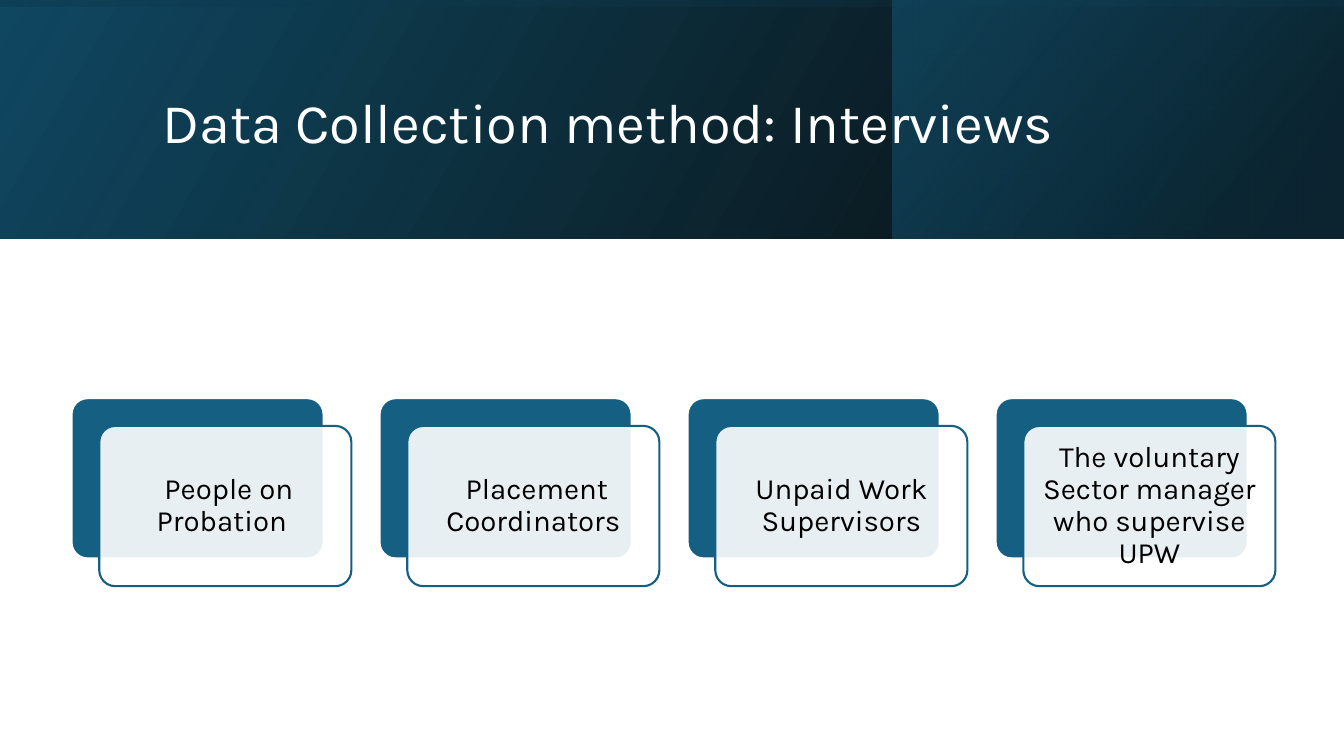
"""Build the interviews slide: a gradient header band and a row of four layered cards."""
from lxml.etree import SubElement
from pptx import Presentation
from pptx.dml.color import RGBColor as RGB
from pptx.enum.shapes import MSO_SHAPE as SHAPE
from pptx.enum.text import MSO_ANCHOR as ANCHOR, MSO_AUTO_SIZE as AUTO, PP_ALIGN as ALIGN
from pptx.oxml.ns import qn
from pptx.util import Inches, Pt

TITLE = "Data Collection method: Interviews"
GROUPS = [
    " People on Probation ",
    " Placement Coordinators",
    "Unpaid Work Supervisors",
    "The voluntary Sector manager who supervise UPW",
]

THEME = {
    "font": "Karla", "title_size": 40, "card_size": 21, "line": 1.5,
    "accent": "156082", "deep": "104862", "night": "0B3041",
    "black": "000000", "white": "FFFFFF",
}

W, H = 13.33, 7.5
BAND = 2.37
GLOW = 4.48
CARD_W, CARD_H, RADIUS = 2.5, 1.59, 0.1
LEFT, TOP, PITCH = 0.71, 3.95, 3.055
SHIFT = 0.275
INSET = 0.045

BANDS = [
    ((0, 0, W, BAND), 0, 330, [(0, "black", 96), (100, "deep", 100)]),
    ((W - GLOW, 0, GLOW, BAND), 0, 320, [(19, "night", 68), (100, "accent", 48)]),
    (((W - BAND) / 2, (BAND - W) / 2, BAND, W), 270, 350,
     [(23, "deep", 16), (99, "black", 45)]),
]


def colour(name):
    return RGB.from_string(THEME[name])


def set_opacity(sp, percents):
    for clr, percent in zip(sp._element.spPr.iter(qn("a:srgbClr")), percents):
        if percent < 100:
            SubElement(clr, qn("a:alpha")).set("val", str(percent * 1000))


def add_band(shapes, box, rotation, angle, stops):
    sp = shapes.add_shape(SHAPE.RECTANGLE, *map(Inches, box))
    sp.shadow.inherit = False
    sp.rotation = rotation
    sp._element.spPr.find(qn("a:xfrm")).set("flipH", "1")
    sp.fill.gradient()
    sp.fill.gradient_angle = 360 - angle
    for stop, (position, name, _) in zip(sp.fill.gradient_stops, stops):
        stop.position = position / 100
        stop.color.rgb = colour(name)
    set_opacity(sp, [opacity for _, _, opacity in stops])
    sp.line.fill.background()


def add_panel(shapes, x, y, fill, line, opacity):
    sp = shapes.add_shape(SHAPE.ROUNDED_RECTANGLE, *map(Inches, (x, y, CARD_W, CARD_H)))
    sp.adjustments[0] = RADIUS
    sp.shadow.inherit = False
    sp.fill.solid()
    sp.fill.fore_color.rgb = colour(fill)
    set_opacity(sp, [opacity])
    sp.line.color.rgb = colour(line)
    sp.line.width = Pt(THEME["line"])


def write(sp, text, size, name, align, margin):
    tf = sp.text_frame
    tf.text = text
    frame = {"word_wrap": True, "auto_size": AUTO.NONE, "vertical_anchor": ANCHOR.MIDDLE}
    frame.update({f"margin_{side}": Inches(margin) for side in ("left", "right", "top", "bottom")})
    p = tf.paragraphs[0]
    font = p.runs[0].font
    for target, formats in (
        (tf, frame),
        (p, {"alignment": align, "line_spacing": 0.9}),
        (font, {"name": THEME["font"], "size": Pt(THEME[size])}),
    ):
        for key, value in formats.items():
            setattr(target, key, value)
    font.color.rgb = colour(name)


def add_card(shapes, x, text):
    add_panel(shapes, x, TOP, "accent", "white", 100)
    x, y = x + SHIFT, TOP + SHIFT
    add_panel(shapes, x, y, "white", "accent", 90)
    box = (x + INSET, y + INSET, CARD_W - 2 * INSET, CARD_H - 2 * INSET)
    write(shapes.add_textbox(*map(Inches, box)), text, "card_size", "black", ALIGN.CENTER, 0.09)


def main():
    prs = Presentation()
    prs.slide_width, prs.slide_height = Inches(W), Inches(H)
    s = prs.slides.add_slide(prs.slide_layouts[5])
    for band in BANDS:
        add_band(s.shapes, *band)

    title = s.shapes.title
    title.left, title.top, title.width, title.height = map(Inches, (1.51, 0.38, 10.63, 1.72))
    write(title, TITLE, "title_size", "white", ALIGN.LEFT, 0.1)
    s.shapes._spTree.append(title._element)

    cards = s.shapes.add_group_shape()
    for i, text in enumerate(GROUPS):
        add_card(cards.shapes, LEFT + i * PITCH, text)
    prs.save("out.pptx")


if __name__ == "__main__":
    main()
